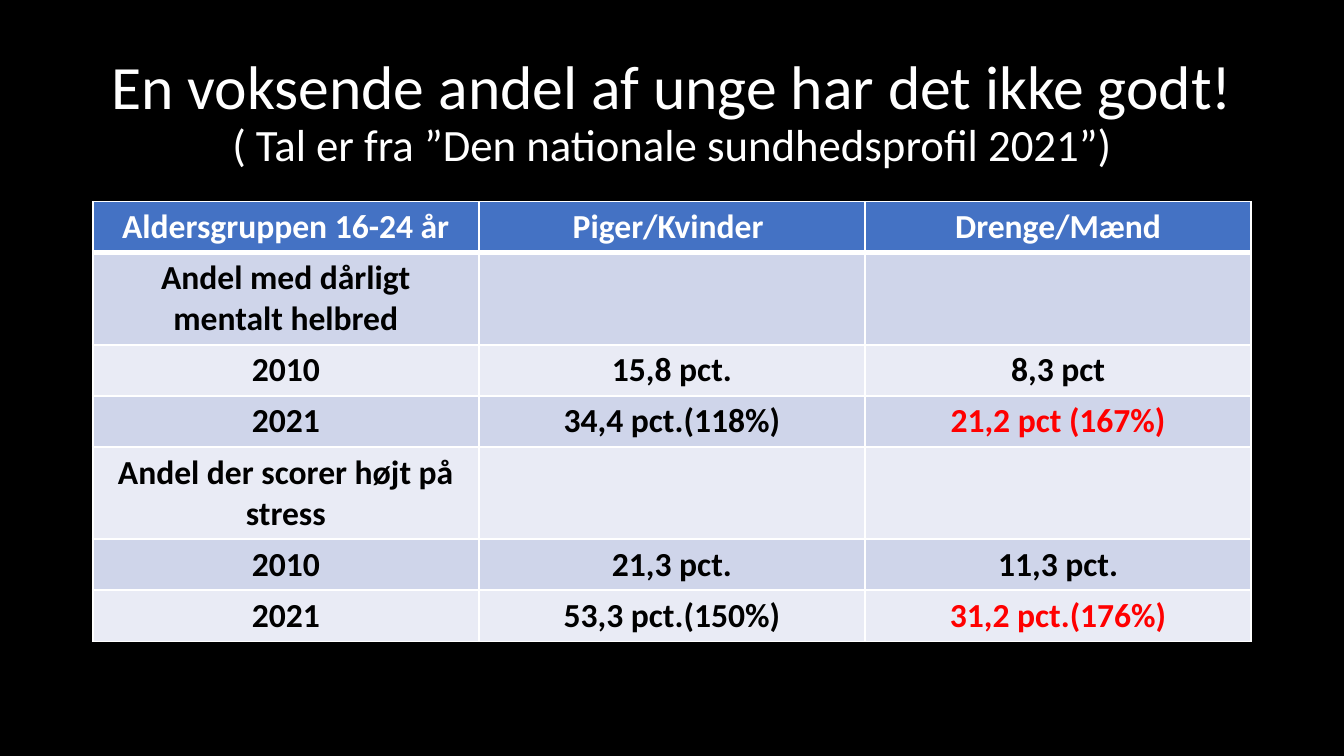
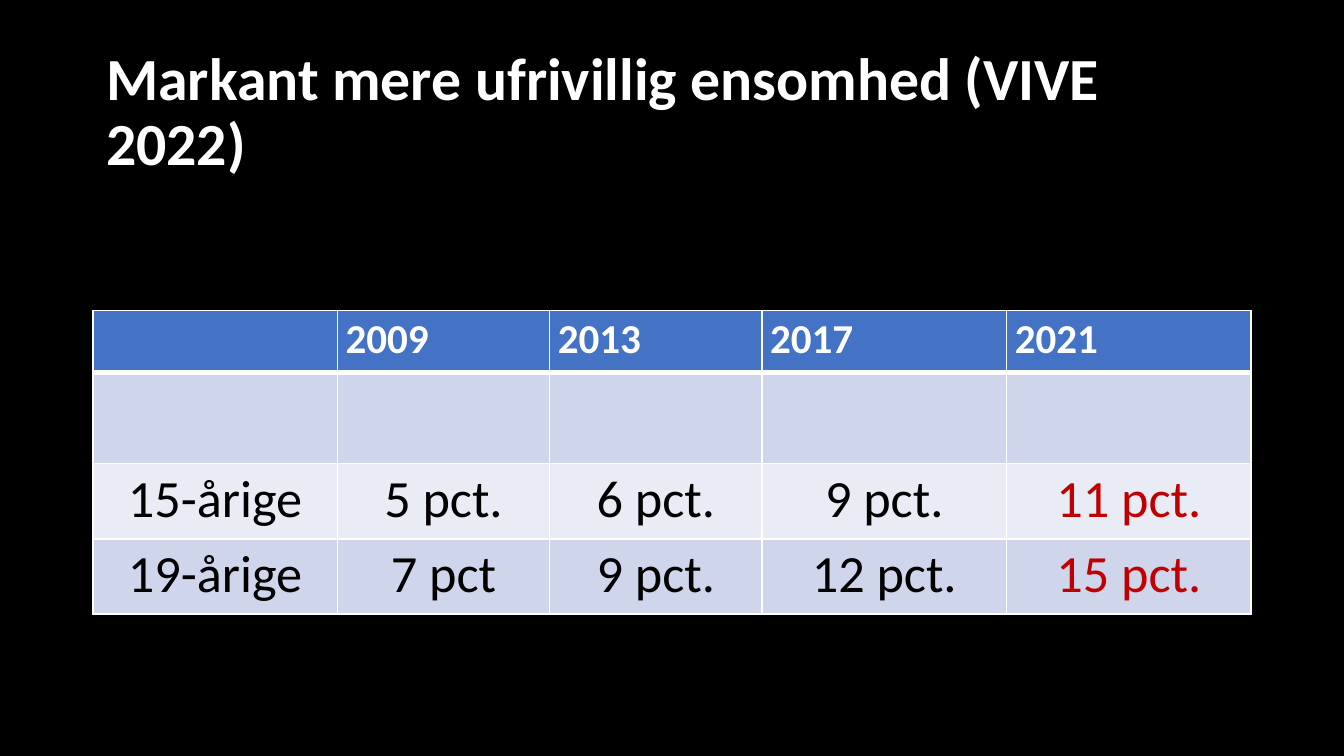
from lxml import etree
from pptx import Presentation
from pptx.dml.color import RGBColor
from pptx.enum.text import MSO_ANCHOR, MSO_AUTO_SIZE, PP_ALIGN
from pptx.oxml.ns import qn
from pptx.util import Inches, Pt

LEFT, CENTER = PP_ALIGN.LEFT, PP_ALIGN.CENTER
MIDDLE, NO_AUTOFIT = MSO_ANCHOR.MIDDLE, MSO_AUTO_SIZE.NONE

BLACK = RGBColor(0x00, 0x00, 0x00)
WHITE = RGBColor(0xFF, 0xFF, 0xFF)
HEADER_BLUE = RGBColor(0x44, 0x72, 0xC4)
BANDS = (RGBColor(0xCF, 0xD5, 0xEA), RGBColor(0xE9, 0xEB, 0xF5))
RED = RGBColor(0xFF, 0x00, 0x00)
DARK_RED = RGBColor(0xC0, 0x00, 0x00)

FONT = "Calibri"
SLIDE_WIDTH = 10
SLIDE_HEIGHT = SLIDE_WIDTH * 9 / 16
MARGIN = 0.69
CONTENT_WIDTH = SLIDE_WIDTH - 2 * MARGIN
TITLE_TOP, TITLE_HEIGHT = 0.3, 1.09

# Cell insets are points (sides, top and bottom); other lengths are inches.
SLIDES = [
    {
        "title": [("En voksende andel af unge har det ikke godt!", 33),
                  ("( Tal er fra ”Den nationale sundhedsprofil 2021”)", 24)],
        "title_align": CENTER, "title_bold": False,
        "rows": [
            ("Aldersgruppen 16-24 år", "Piger/Kvinder ", "Drenge/Mænd"),
            ("Andel med dårligt mentalt helbred", "", ""),
            ("2010", "15,8 pct.", "8,3 pct"),
            ("2021", "34,4 pct.(118%)", "21,2 pct (167%)"),
            ("Andel der scorer højt på stress", "", ""),
            ("2010", "21,3 pct.", "11,3 pct."),
            ("2021", "53,3 pct.(150%)", "31,2 pct.(176%)"),
        ],
        "top": 1.5,
        "column_shares": (1, 1, 1),
        "row_heights": (0.38, 0.68, 0.38, 0.38, 0.68, 0.38, 0.38),
        "inset": (5.6, 2.7),
        "header_size": 18, "header_align": CENTER,
        "body_size": 18, "body_bold": True,
        "highlights": {(3, 2), (6, 2)}, "highlight_color": RED,
    },
    {
        "title": [("Markant mere ufrivillig ensomhed (VIVE 2022)", 32)],
        "title_align": LEFT, "title_bold": True,
        "rows": [
            ("", "2009", "2013", "2017", "2021"),
            ("", "", "", "", ""),
            ("15-årige", "5 pct.", "6 pct.", "9 pct.", "11 pct."),
            ("19-årige", "7 pct", "9 pct.", "12 pct.", "15 pct."),
        ],
        "top": 2.31,
        "column_shares": (1.82, 1.58, 1.58, 1.82, 1.82),
        "row_heights": (0.46, 0.68, 0.56, 0.56),
        "inset": (4.4, 2.2),
        "header_size": 22, "header_align": LEFT,
        "body_size": 28, "body_bold": False,
        "highlights": {(2, 4), (3, 4)}, "highlight_color": DARK_RED,
    },
]


def format_paragraph(paragraph, size, color, bold, align):
    paragraph.alignment = align
    font = paragraph.font
    font.name, font.size, font.bold = FONT, Pt(size), bold
    font.color.rgb = color


def add_title(slide, content):
    title = slide.shapes.title
    title.left, title.top = Inches(MARGIN), Inches(TITLE_TOP)
    title.width, title.height = Inches(CONTENT_WIDTH), Inches(TITLE_HEIGHT)
    frame = title.text_frame
    frame.word_wrap, frame.auto_size = True, NO_AUTOFIT
    frame.vertical_anchor = MIDDLE
    paragraph = frame.paragraphs[0]
    paragraph.text = "\v".join(text for text, size in content["title"])
    format_paragraph(paragraph, content["title"][0][1], WHITE,
                     content["title_bold"], content["title_align"])
    paragraph.line_spacing = 0.9
    for run, (text, size) in zip(paragraph.runs, content["title"]):
        run.font.size = Pt(size)


def set_borders(cell, widths):
    """Draw white cell borders; widths are points for left, right, top, bottom."""
    properties = cell._tc.get_or_add_tcPr()
    for index, (side, width) in enumerate(zip("LRTB", widths)):
        line = etree.Element(qn(f"a:ln{side}"), w=str(Pt(width)))
        fill = etree.SubElement(line, qn("a:solidFill"))
        etree.SubElement(fill, qn("a:srgbClr"), val=str(WHITE))
        properties.insert(index, line)


def format_cell(cell, row, column, content):
    is_header = row == 0
    side_inset, end_inset = content["inset"]
    cell.margin_left = cell.margin_right = Pt(side_inset)
    cell.margin_top = cell.margin_bottom = Pt(end_inset)
    cell.fill.solid()
    cell.fill.fore_color.rgb = HEADER_BLUE if is_header else BANDS[(row - 1) % 2]
    set_borders(cell, (1, 1, 3 if row == 1 else 1, 3 if is_header else 1))
    paragraph = cell.text_frame.paragraphs[0]
    if is_header:
        format_paragraph(paragraph, content["header_size"], WHITE, True,
                         content["header_align"])
    else:
        highlighted = (row, column) in content["highlights"]
        color = content["highlight_color"] if highlighted else BLACK
        format_paragraph(paragraph, content["body_size"], color,
                         content["body_bold"], CENTER)


def add_data_table(slide, content):
    rows, shares, heights = (content[key] for key in
                             ("rows", "column_shares", "row_heights"))
    table = slide.shapes.add_table(
        len(rows), len(shares), Inches(MARGIN), Inches(content["top"]),
        Inches(CONTENT_WIDTH), Inches(sum(heights))).table
    for column, share in zip(table.columns, shares):
        column.width = Inches(CONTENT_WIDTH * share / sum(shares))
    for row, height in zip(table.rows, heights):
        row.height = Inches(height)
    for row, texts in enumerate(rows):
        for column, text in enumerate(texts):
            cell = table.cell(row, column)
            cell.text = text
            format_cell(cell, row, column, content)


def main():
    presentation = Presentation()
    presentation.slide_width = Inches(SLIDE_WIDTH)
    presentation.slide_height = Inches(SLIDE_HEIGHT)
    background = presentation.slide_master.background.fill
    background.solid()
    background.fore_color.rgb = BLACK
    title_only = presentation.slide_layouts.get_by_name("Title Only")
    for content in SLIDES:
        slide = presentation.slides.add_slide(title_only)
        add_title(slide, content)
        add_data_table(slide, content)
    presentation.save("out.pptx")


if __name__ == "__main__":
    main()
